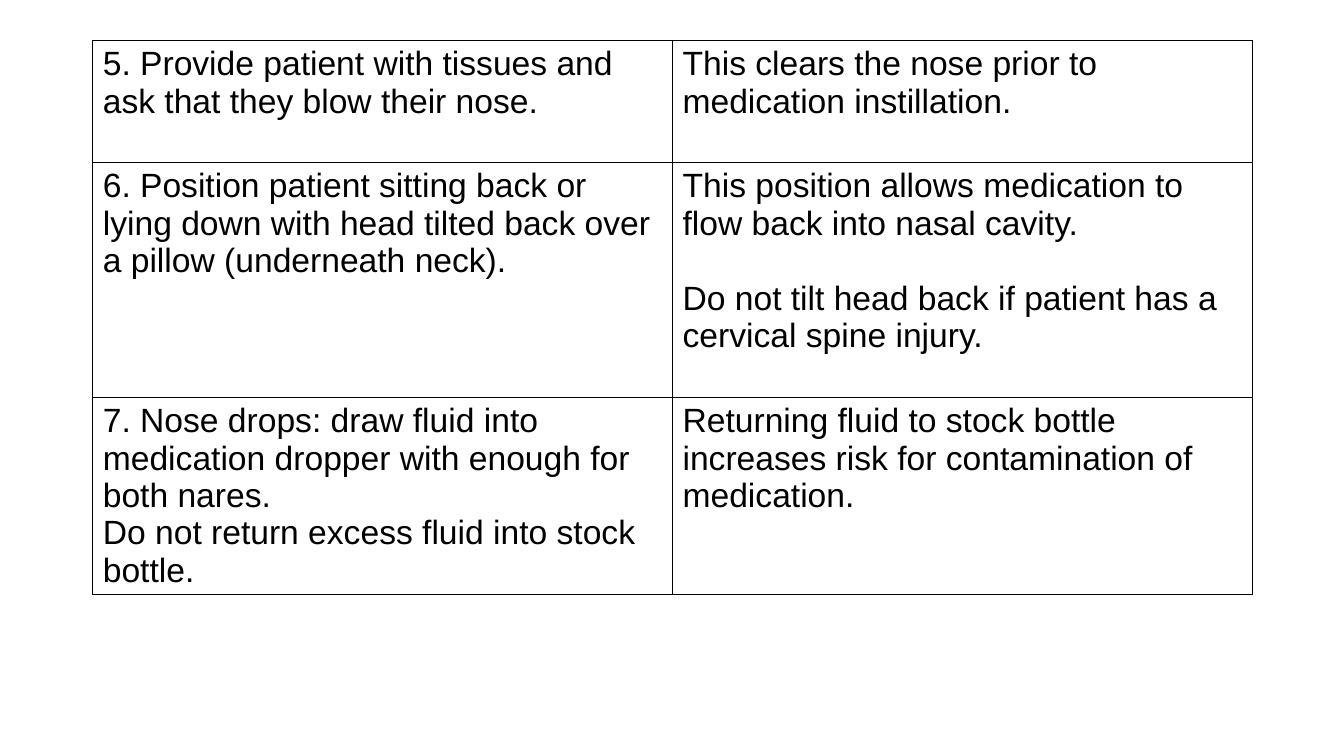
import lxml.etree
import pptx
import pptx.dml.color
import pptx.oxml.ns
import pptx.util

COLORS = {"text": "000000", "border": "000000", "fill": "FFFFFF"}
ROW_HEIGHTS = [1.21, 2.33, 1.96]
STEPS = [
    (
        ["5. Provide patient with tissues and ask that they blow their nose."],
        ["This clears the nose prior to medication instillation."],
    ),
    (
        ["6. Position patient sitting back or lying down with head tilted back over a pillow (underneath neck)."],
        [
            "This position allows medication to flow back into nasal cavity.",
            "Do not tilt head back if patient has a cervical spine injury.",
        ],
    ),
    (
        [
            "7. Nose drops: draw fluid into medication dropper with enough for both nares.",
            "Do not return excess fluid into stock bottle.",
        ],
        ["Returning fluid to stock bottle increases risk for contamination of medication."],
    ),
]
RATIONALE_COLUMN = 1


class SlideBuilder:
    """Holds the style and the current slide, and adds its elements."""

    def __init__(self, slide, font="Arial", size=24, border_width=0.75):
        self.slide = slide
        self.font = font
        self.size = size
        self.border_width = border_width

    def color(self, name):
        return pptx.dml.color.RGBColor.from_string(COLORS[name])

    def table(self, left, top, column_widths, row_heights, rows):
        inches = pptx.util.Inches
        table = self.slide.shapes.add_table(
            len(row_heights), len(column_widths), inches(left), inches(top),
            inches(sum(column_widths)), inches(sum(row_heights)),
        ).table
        table.first_row = False
        table.horz_banding = False
        for column, width in zip(table.columns, column_widths):
            column.width = inches(width)
        for row, height, texts in zip(table.rows, row_heights, rows):
            row.height = inches(height)
            for index, (cell, paragraphs) in enumerate(zip(row.cells, texts)):
                gap = 27 if index == RATIONALE_COLUMN else 0
                self.cell(cell, paragraphs, gap)

    def cell(self, cell, paragraphs, gap):
        cell.fill.solid()
        cell.fill.fore_color.rgb = self.color("fill")
        self.borders(cell)
        for index, text in enumerate(paragraphs):
            frame = cell.text_frame
            paragraph = frame.add_paragraph() if index else frame.paragraphs[0]
            if index:
                paragraph.space_before = pptx.util.Pt(gap)
            run = paragraph.add_run()
            run.text = text
            run.font.name = self.font
            run.font.size = pptx.util.Pt(self.size)
            run.font.color.rgb = self.color("text")

    def borders(self, cell):
        qn = pptx.oxml.ns.qn
        properties = cell._tc.get_or_add_tcPr()
        for index, side in enumerate(("lnL", "lnR", "lnT", "lnB")):
            line = lxml.etree.Element(qn(f"a:{side}"), w=str(pptx.util.Pt(self.border_width)))
            fill = lxml.etree.SubElement(line, qn("a:solidFill"))
            lxml.etree.SubElement(fill, qn("a:srgbClr"), val=COLORS["border"])
            properties.insert(index, line)


def main():
    presentation = pptx.Presentation()
    presentation.slide_width = pptx.util.Inches(13.33)
    presentation.slide_height = pptx.util.Inches(7.5)
    blank_layout = presentation.slide_layouts.get_by_name("Blank")
    builder = SlideBuilder(presentation.slides.add_slide(blank_layout))
    builder.table(0.92, 0.4, [5.75, 5.75], ROW_HEIGHTS, STEPS)
    presentation.save("out.pptx")


if __name__ == "__main__":
    main()
